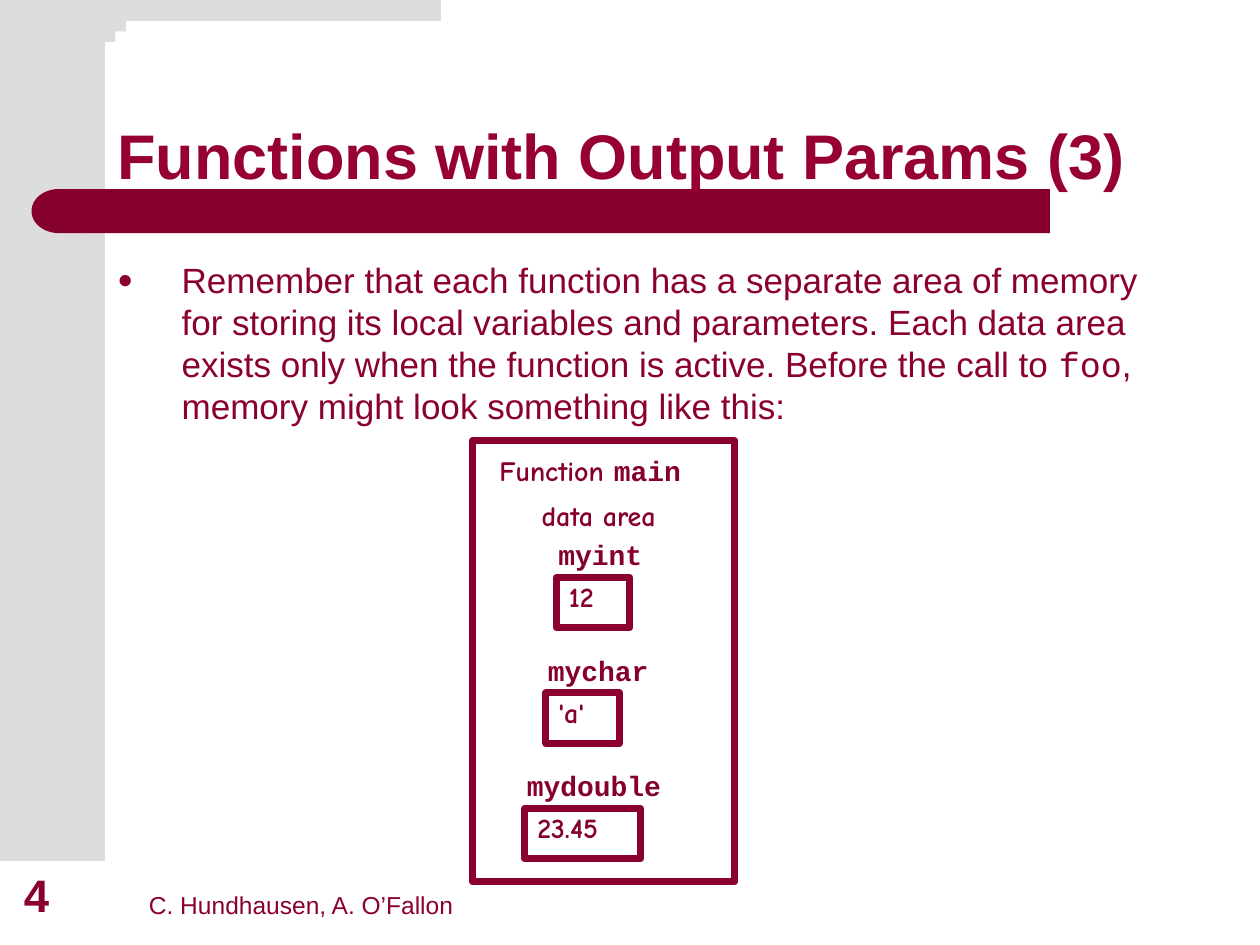
from dataclasses import dataclass
from math import cos, pi, sin

from lxml.etree import SubElement
from pptx import Presentation
from pptx.dml.color import RGBColor
from pptx.enum.shapes import MSO_SHAPE as Shape
from pptx.enum.text import MSO_ANCHOR as Anchor, PP_ALIGN as Align
from pptx.oxml.ns import qn
from pptx.util import Inches, Pt

GREY = RGBColor(0xDD, 0xDD, 0xDD)
BAR = RGBColor(0x86, 0x00, 0x2D)
TEXT = RGBColor(0x8A, 0x00, 0x2E)
TITLE = RGBColor(0x96, 0x00, 0x32)
SANS, HAND, CODE = "Arial", "Comic Neue", "Courier New"

WIDTH, HEIGHT = Inches(10), Inches(7.5)
COLS, ROWS = 120, 90  # square grid cells


@dataclass
class Area:
    """A rectangle in grid columns and rows."""
    col: float
    row: float
    cols: float
    rows: float

    def emu(self) -> tuple[int, ...]:
        return (round(self.col * WIDTH / COLS), round(self.row * HEIGHT / ROWS),
                round(self.cols * WIDTH / COLS), round(self.rows * HEIGHT / ROWS))


@dataclass
class Style:
    size: float
    color: RGBColor
    bold: bool = False


@dataclass
class Variable:
    name: str
    value: str
    col: float
    row: float
    label_cols: float
    box_cols: float


HEADING = Style(36, TITLE, True)
BODY = Style(20, TEXT)
FOOTER = Style(14, TEXT)
NUMBER = Style(26, TEXT, True)
MEMORY = Style(16, BAR, True)

VARIABLES = [
    Variable("myint", "12", 52, 51, 12, 7),
    Variable("mychar", "'a'", 51, 62, 14, 7),
    Variable("mydouble", "23.45", 49, 73, 18, 11),
]


def write(sp, paragraphs: list[list[tuple[str, str]]], style: Style,
          anchor=Anchor.TOP, align=Align.LEFT, spacing: float = 1.0):
    """Fill a shape with paragraphs, each a list of (text, font name) runs."""
    tf = sp.text_frame
    tf.word_wrap = True
    tf.vertical_anchor = anchor
    for i, runs in enumerate(paragraphs):
        p = tf.paragraphs[0] if i == 0 else tf.add_paragraph()
        p.alignment = align
        p.line_spacing = spacing
        if i:
            p.space_before = Pt(style.size / 2)
        for text, font in runs:
            r = p.add_run()
            r.text = text
            r.font.name = font
            r.font.size = Pt(style.size)
            r.font.bold = style.bold
            r.font.color.rgb = style.color


def add_text(slide, area: Area, paragraphs, style: Style, **layout):
    sp = slide.shapes.add_textbox(*area.emu())
    write(sp, paragraphs, style, **layout)
    return sp


def add_solid(slide, kind, area: Area, color: RGBColor):
    sp = slide.shapes.add_shape(kind, *area.emu())
    sp.shadow.inherit = False
    sp.fill.solid()
    sp.fill.fore_color.rgb = color
    sp.line.fill.background()
    return sp


def add_frame(slide, area: Area):
    sp = slide.shapes.add_shape(Shape.RECTANGLE, *area.emu())
    sp.shadow.inherit = False
    sp.fill.background()
    sp.line.color.rgb = TEXT
    sp.line.width = Pt(4)
    return sp


def add_corner(slide):
    """Top band that meets the side band in a rounded inner corner."""
    side, band, radius, steps = 10, 2, 4, 24
    arc = [(side + radius - radius * sin(a), band + radius - radius * cos(a))
           for a in (pi / 2 * i / steps for i in range(steps + 1))]
    points = [(42, band), *arc, (side, 7.3), (6, 7.3), (6, 0)]
    fb = slide.shapes.build_freeform(42, 0, scale=WIDTH / COLS)
    fb.add_line_segments(points)
    sp = fb.convert_to_shape()
    sp.shadow.inherit = False
    sp.fill.solid()
    sp.fill.fore_color.rgb = GREY
    sp.line.fill.background()


def add_bullet(p):
    pPr = p._p.get_or_add_pPr()
    pPr.set("marL", str(Inches(0.51)))
    pPr.set("indent", str(-Inches(0.51)))
    color = SubElement(pPr, qn("a:buClr"))
    SubElement(color, qn("a:srgbClr"), val=str(TEXT))
    SubElement(pPr, qn("a:buSzPct"), val="75000")
    SubElement(pPr, qn("a:buFont"), typeface=SANS)
    SubElement(pPr, qn("a:buChar"), char="●")


def add_variable(slide, v: Variable):
    box = add_frame(slide, Area(v.col + 1, v.row + 4, v.box_cols, 4.8))
    write(box, [[(v.value, HAND)]], MEMORY, spacing=0.9)
    add_text(slide, Area(v.col, v.row, v.label_cols, 4), [[(v.name, CODE)]],
             MEMORY, spacing=0.9)


def add_background(slide):
    add_solid(slide, Shape.RECTANGLE, Area(0, 0, 10, 82), GREY)
    add_corner(slide)
    add_solid(slide, Shape.RECTANGLE, Area(8, 18, 92, 4.2), BAR)
    cap = add_solid(slide, Shape.FLOWCHART_DELAY, Area(3, 18, 5.2, 4.2), BAR)
    cap._element.spPr.find(qn("a:xfrm")).set("flipH", "1")


def main():
    prs = Presentation()
    prs.slide_width, prs.slide_height = WIDTH, HEIGHT
    slide = prs.slides.add_slide(prs.slide_layouts[6])
    add_background(slide)

    add_text(slide, Area(13, 82, 45, 6.2), [[("C. Hundhausen, A. O’Fallon", SANS)]],
             FOOTER, anchor=Anchor.BOTTOM)
    add_text(slide, Area(1.1, 82, 7.7, 6.4), [[("4", SANS)]],
             NUMBER, anchor=Anchor.BOTTOM)
    add_text(slide, Area(10, 4, 104, 15), [[("Functions with Output Params (3)", SANS)]],
             HEADING, anchor=Anchor.BOTTOM, spacing=0.9)
    body = add_text(slide, Area(10, 24, 101, 48.8), [[
        ("Remember that each function has a separate area of memory for storing "
         "its local variables and parameters. Each data area exists only when the "
         "function is active. Before the call to ", SANS),
        ("foo", CODE),
        (", memory might look something like this:", SANS),
    ]], BODY)
    add_bullet(body.text_frame.paragraphs[0])

    add_text(slide, Area(46, 43, 22, 8.6),
             [[("Function ", HAND), ("main ", CODE)], [("data area", HAND)]],
             MEMORY, align=Align.CENTER, spacing=0.9)
    add_frame(slide, Area(45, 42, 25, 42))
    for v in VARIABLES:
        add_variable(slide, v)

    prs.save("out.pptx")


if __name__ == "__main__":
    main()
